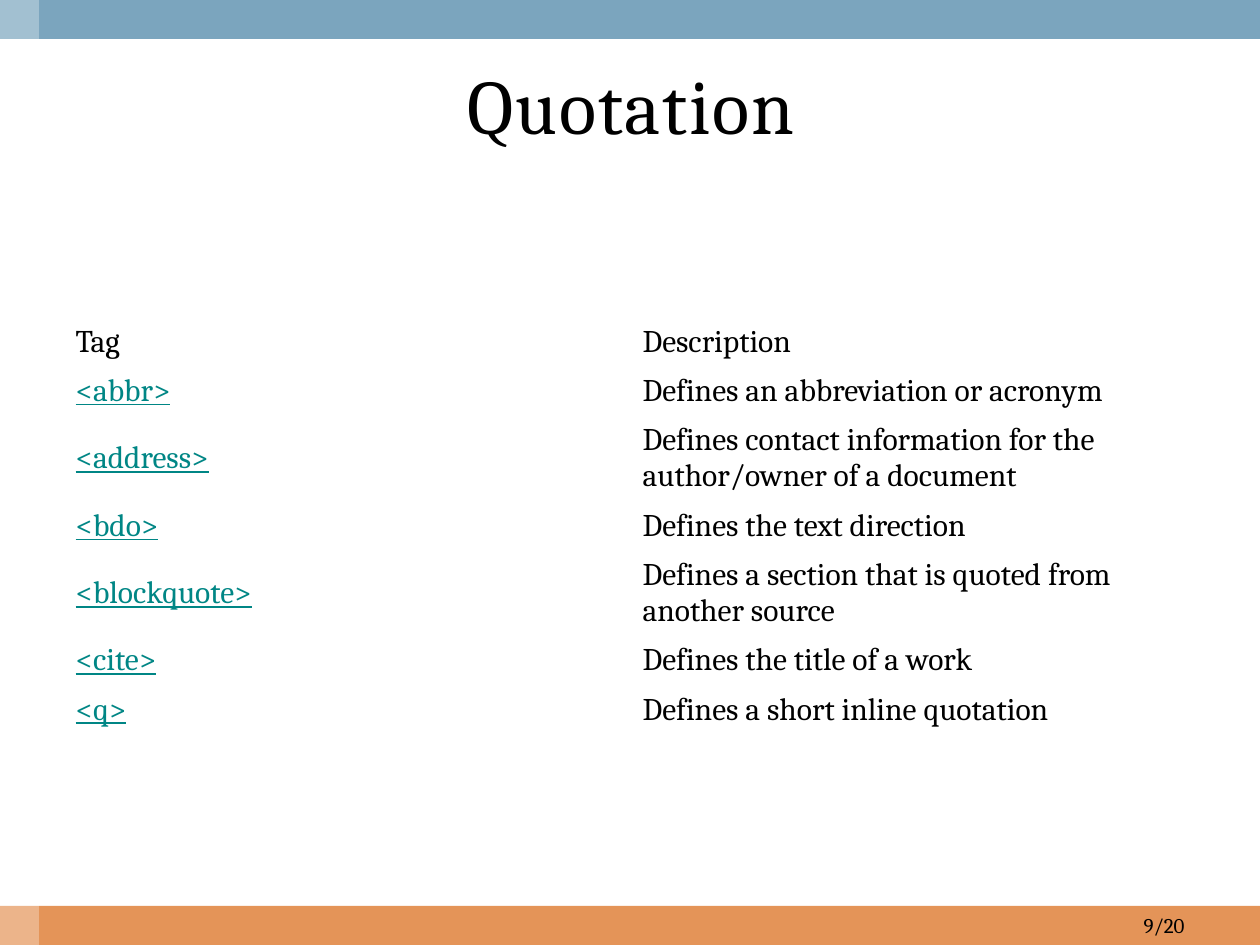
from dataclasses import dataclass

from lxml import etree
from pptx import Presentation
from pptx.dml.color import RGBColor
from pptx.enum.shapes import MSO_SHAPE
from pptx.enum.text import MSO_ANCHOR, PP_ALIGN
from pptx.oxml.ns import qn
from pptx.util import Inches, Pt

RECT = MSO_SHAPE.RECTANGLE
MIDDLE = MSO_ANCHOR.MIDDLE
LEFT, CENTER, RIGHT = PP_ALIGN.LEFT, PP_ALIGN.CENTER, PP_ALIGN.RIGHT


@dataclass(frozen=True)
class Theme:
    font: str = "Cambria"
    ink: str = "000000"
    link: str = "008685"
    blue: str = "7BA5BE"
    orange: str = "E49458"
    white: str = "FFFFFF"
    title: int = 44
    body: int = 18
    small: int = 12


THEME = Theme()
WIDE, HIGH, BAND = 10, 7.5, 0.31
ROW, TALL = 0.39, 0.68
WRAP = 40  # characters that fit on one line of a column

ROWS = [
    ("Tag", "Description"),
    ("<abbr>", "Defines an abbreviation or acronym"),
    ("<address>",
     "Defines contact information for the author/owner of a document"),
    ("<bdo>", "Defines the text direction"),
    ("<blockquote>", "Defines a section that is quoted from another source"),
    ("<cite>", "Defines the title of a work"),
    ("<q>", "Defines a short inline quotation"),
]


def write(frame, text, size, color=THEME.ink, align=LEFT):
    """Fill a text frame with one styled paragraph and return its run."""
    frame.text = text
    frame.word_wrap = True
    para = frame.paragraphs[0]
    para.alignment = align
    run = para.runs[0]
    run.font.name = THEME.font
    run.font.size = Pt(size)
    run.font.color.rgb = RGBColor.from_string(color)
    return run


def add_bar(slide, box, color, alpha=None):
    """Add a plain bar; alpha is its opacity in percent."""
    bar = slide.shapes.add_shape(RECT, *map(Inches, box))
    bar.shadow.inherit = False
    bar.line.fill.background()
    bar.fill.solid()
    bar.fill.fore_color.rgb = RGBColor.from_string(color)
    if alpha is not None:
        tint = bar.fill._xPr.find(".//" + qn("a:srgbClr"))
        etree.SubElement(tint, qn("a:alpha"), val=str(alpha * 1000))


def add_frame(slide, box):
    """Add the bottom and top bands and the pale strip down the left."""
    left, top, width, height = box
    add_bar(slide, (left, top + height - BAND, width, BAND), THEME.orange)
    add_bar(slide, (left, top, width, BAND), THEME.blue)
    add_bar(slide, (left, top, BAND, height), THEME.white, 30)


def set_title(slide, box, text):
    title = slide.shapes.title
    title.left, title.top, title.width, title.height = map(Inches, box)
    title.text_frame.vertical_anchor = MIDDLE
    run = write(title.text_frame, text, THEME.title, align=CENTER)
    run.font._element.set("spc", "100")


def add_tags(slide, box, rows):
    shape = slide.shapes.add_table(len(rows), 2, *map(Inches, box))
    table = shape.table
    table.first_row = table.horz_banding = False
    for r, texts in enumerate(rows):
        table.rows[r].height = Inches(TALL if len(texts[1]) > WRAP else ROW)
        for c, text in enumerate(texts):
            cell = table.cell(r, c)
            cell.fill.background()
            cell.vertical_anchor = MIDDLE
            linked = r > 0 and c == 0
            color = THEME.link if linked else THEME.ink
            run = write(cell.text_frame, text, THEME.body, color)
            run.font.underline = linked


def add_number(slide, box, text):
    label = slide.shapes.add_textbox(*map(Inches, box))
    label.text_frame.vertical_anchor = MIDDLE
    write(label.text_frame, text, THEME.small, align=RIGHT)


def main():
    deck = Presentation()
    deck.slide_width, deck.slide_height = Inches(WIDE), Inches(HIGH)
    slide = deck.slides.add_slide(deck.slide_layouts[5])
    add_frame(slide, (0, 0, WIDE, HIGH))
    set_title(slide, (0.33, BAND, 9.36, 1.03), "Quotation")
    add_tags(slide, (0.5, 2.52, 9, 3.31), ROWS)
    add_number(slide, (7.17, HIGH - BAND, 2.33, BAND), "9/20")
    deck.save("out.pptx")


if __name__ == "__main__":
    main()
